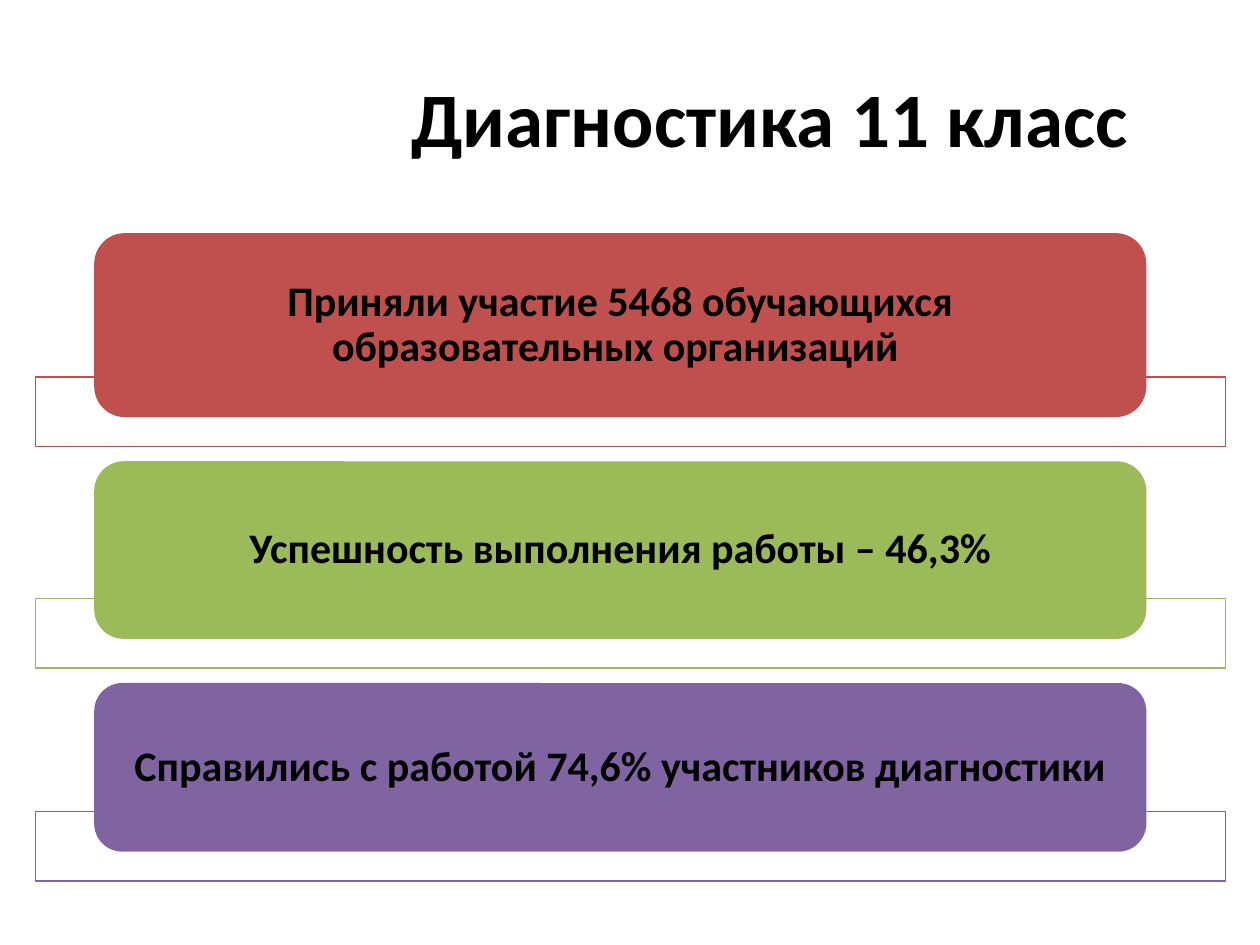
from dataclasses import dataclass

from pptx import Presentation
from pptx.dml.color import RGBColor as Rgb
from pptx.enum.shapes import MSO_SHAPE as Kind
from pptx.enum.text import MSO_ANCHOR as Anchor, PP_ALIGN as Align
from pptx.oxml.ns import qn
from pptx.util import Cm, Pt
from lxml.etree import SubElement

COLORS = {
    "red": "C0504D",
    "green": "9BBB59",
    "violet": "8064A2",
    "white": "FFFFFF",
    "black": "000000",
}
TOP = 4.7
BAR = 1.4
LAP = 0.81
GAP = 0.3


@dataclass
class Item:
    text: str
    color: str
    height: float


ITEMS = [
    Item("Приняли участие 5468 обучающихся образовательных организаций ", "red", 3.71),
    Item("Успешность выполнения работы – 46,3%", "green", 3.58),
    Item("Справились с работой 74,6% участников диагностики ", "violet", 3.4),
]


def shade(name: str) -> Rgb:
    """Return the named colour."""
    return Rgb.from_string(COLORS[name])


def write(shape, text: str, *, size: int, inset: float = 0.25, pad: float = 0.13,
          lines: float = 1.0) -> None:
    """Put bold centred text into a shape."""
    frame = shape.text_frame
    frame.word_wrap = True
    frame.vertical_anchor = Anchor.MIDDLE
    frame.margin_left = frame.margin_right = Cm(inset)
    frame.margin_top = frame.margin_bottom = Cm(pad)
    para = frame.paragraphs[0]
    para.alignment = Align.CENTER
    para.line_spacing = lines
    run = para.add_run()
    run.text = text
    font = run.font
    font.name, font.size, font.bold = "Calibri", Pt(size), True
    font.color.rgb = shade("black")


def block(slide, kind: Kind, left: float, top: float, width: float, height: float,
          fill: str):
    """Add a filled shape without a shadow."""
    shape = slide.shapes.add_shape(kind, Cm(left), Cm(top), Cm(width), Cm(height))
    shape.shadow.inherit = False
    shape.fill.solid()
    shape.fill.fore_color.rgb = shade(fill)
    return shape


def draw(slide, item: Item, top: float) -> float:
    """Draw one item with its bar and return the next top."""
    level = top + item.height - LAP
    bar = block(slide, Kind.RECTANGLE, 0.71, level, 24, BAR, "white")
    bar.line.color.rgb = shade(item.color)
    bar.line.width = Pt(0.75)
    tint = bar.fill._xPr.find(qn("a:solidFill"))[0]
    SubElement(tint, qn("a:alpha")).set("val", "90000")
    card = block(slide, Kind.ROUNDED_RECTANGLE, 1.9, top, 21.21, item.height, item.color)
    card.line.fill.background()
    write(card, item.text, size=24, inset=0.6, pad=0, lines=0.9)
    return level + BAR + GAP


def main() -> None:
    """Build and save the slide."""
    deck = Presentation()
    deck.slide_width, deck.slide_height = Cm(25.4), Cm(19.05)
    slide = deck.slides.add_slide(deck.slide_layouts[6])
    title = slide.shapes.add_textbox(Cm(6.91), Cm(0.76), Cm(17.22), Cm(3.18))
    write(title, "Диагностика 11 класс", size=44)
    top = TOP
    for item in ITEMS:
        top = draw(slide, item, top)
    deck.save("out.pptx")


if __name__ == "__main__":
    main()
